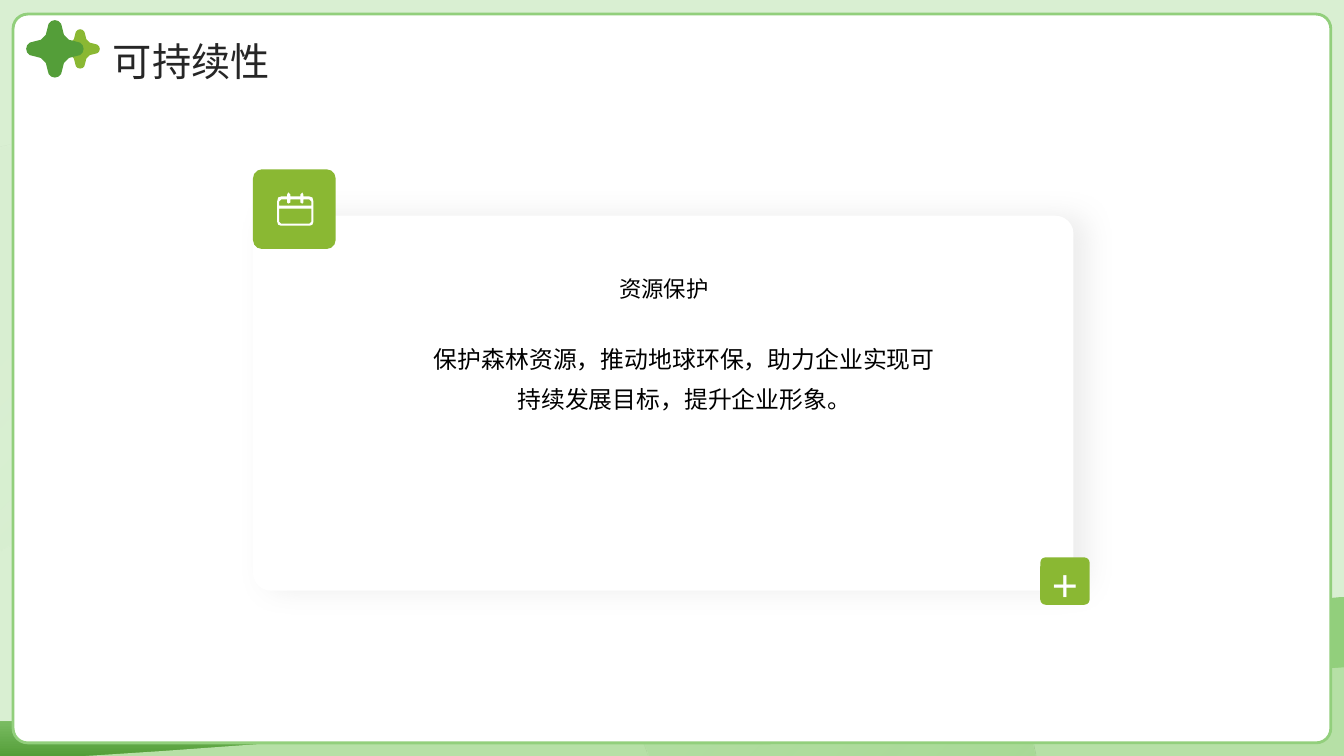
from dataclasses import dataclass

from lxml import etree
from pptx import Presentation
from pptx.dml.color import RGBColor
from pptx.enum.shapes import MSO_SHAPE
from pptx.enum.text import MSO_ANCHOR, MSO_AUTO_SIZE, PP_ALIGN
from pptx.oxml.ns import qn
from pptx.util import Inches, Pt

RECT, ROUND = MSO_SHAPE.RECTANGLE, MSO_SHAPE.ROUNDED_RECTANGLE
TOP, MIDDLE = MSO_ANCHOR.TOP, MSO_ANCHOR.MIDDLE
LEFT, CENTER = PP_ALIGN.LEFT, PP_ALIGN.CENTER
NO_FIT = MSO_AUTO_SIZE.NONE
WIDE, HIGH = 40 / 3, 7.5


@dataclass(frozen=True)
class Theme:
    font: str = "Arial"
    white: str = "FFFFFF"
    black: str = "000000"
    ink: str = "262626"
    pale: str = "D9EFD2"
    mist: str = "B6E0A6"
    leaf: str = "92CF7C"
    lime: str = "8AB833"
    forest: str = "549E39"
    shade: str = "A5A5A5"
    title: int = 28
    head: int = 16
    body: int = 17
    plus: int = 32


THEME = Theme()


def rgb(code):
    return RGBColor.from_string(code)


def add_box(slide, kind, box, fill, line=None, round_by=None):
    shape = slide.shapes.add_shape(kind, *map(Inches, box))
    shape.shadow.inherit = False
    if round_by is not None:
        shape.adjustments[0] = round_by
    shape.fill.solid()
    shape.fill.fore_color.rgb = rgb(fill)
    if line:
        shape.line.color.rgb = rgb(line)
        shape.line.width = Pt(2)
    else:
        shape.line.fill.background()
    return shape


def trace(start, steps, parts=6):
    """Turn line steps (x, y) and cubic steps (six numbers) into points."""
    points = [start]
    for step in steps:
        if len(step) == 2:
            points.append(step)
            continue
        knots = [points[-1], step[:2], step[2:4], step[4:]]
        for i in range(1, parts + 1):
            t = i / parts
            u = 1 - t
            mix = (u ** 3, 3 * u * u * t, 3 * u * t * t, t ** 3)
            points.append(tuple(sum(m * k[a] for m, k in zip(mix, knots))
                                for a in (0, 1)))
    return points


def add_form(slide, loops, fill=None):
    """Join closed outlines into one shape; inner ones become holes."""
    form = None
    for loop in loops:
        start, *rest = [tuple(map(Inches, point)) for point in loop]
        if form is None:
            form = slide.shapes.build_freeform(*start)
        else:
            form.move_to(*start)
        form.add_line_segments(rest, close=True)
    shape = form.convert_to_shape()
    shape.shadow.inherit = False
    shape.line.fill.background()
    if fill:
        shape.fill.solid()
        shape.fill.fore_color.rgb = rgb(fill)
    return shape


def set_blend(shape, angle, stops):
    """Apply a two-stop gradient; each stop is (position, colour, opacity)."""
    shape.fill.gradient()
    shape.fill.gradient_angle = angle
    for stop, (place, color, alpha) in zip(shape.fill.gradient_stops, stops):
        stop.position = place
        stop.color.rgb = rgb(color)
        tint = stop._gs.find(qn("a:srgbClr"))
        etree.SubElement(tint, qn("a:alpha"), val=str(alpha * 1000))


def set_shade(shape):
    """Cast a soft grey shadow to the right."""
    glow = shape._element.spPr.find(qn("a:effectLst"))
    cast = etree.SubElement(glow, qn("a:outerShdw"), blurRad=str(Pt(20)),
                            dist=str(Pt(10)), dir="0", algn="l", rotWithShape="0")
    tint = etree.SubElement(cast, qn("a:srgbClr"), val=THEME.shade)
    etree.SubElement(tint, qn("a:alpha"), val="20000")


def write(shape, text, size, color, space, align=CENTER, anchor=TOP, inset=(0, 0)):
    frame = shape.text_frame
    frame.text = text
    side, edge = map(Inches, inset)
    para = frame.paragraphs[0]
    formats = (
        (frame, {"word_wrap": True, "auto_size": NO_FIT, "vertical_anchor": anchor,
                 "margin_left": side, "margin_right": side,
                 "margin_top": edge, "margin_bottom": edge}),
        (para, {"alignment": align, "line_spacing": space}),
        (para.runs[0].font, {"name": THEME.font, "size": Pt(size)}),
    )
    for target, values in formats:
        for name, value in values.items():
            setattr(target, name, value)
    para.runs[0].font.color.rgb = rgb(color)


def add_text(slide, box, *args, **options):
    write(slide.shapes.add_textbox(*map(Inches, box)), *args, **options)


def draw_back(slide, box):
    x, y, w, h = box
    right, base = x + w, y + h
    add_box(slide, RECT, box, THEME.pale)
    hill = trace((right, y + 5.92), [
        (right, base), (x, base), (x, y + 7.16), (x + 0.13, y + 7.16),
        (x + 4.08, y + 7.09, x + 9.13, y + 6.34, x + 12.7, y + 5.98)])
    set_blend(add_form(slide, [hill]), 270,
              [(0.65, THEME.leaf, 100), (1, THEME.forest, 100)])
    slope = trace((right, y + 6.62), [
        (right, base), (x + 0.85, base), (x + 1.62, y + 7.45),
        (x + 5.62, y + 7.16, x + 9.43, y + 6.89, x + 12.83, y + 6.66)], 3)
    add_form(slide, [slope], THEME.mist)
    arc = trace((x + 2.35, y + 1.12), [
        (x + 1.65, y + 1.12, x + 0.97, y + 1.21, x + 0.33, y + 1.38),
        (x, y + 1.47), (x, y + 5.47), (x + 0.05, y + 5.44),
        (x + 0.72, y + 5.03, x + 1.51, y + 4.8, x + 2.35, y + 4.8),
        (x + 4.12, y + 4.8, x + 5.64, y + 5.82, x + 6.36, y + 7.31),
        (x + 6.44, base), (x + 10.28, base), (x + 10.21, y + 7.21),
        (x + 9.31, y + 3.71, x + 6.13, y + 1.12, x + 2.35, y + 1.12)], 4)
    set_blend(add_form(slide, [arc]), 135,
              [(0, THEME.leaf, 37), (0.85, THEME.pale, 10)])
    add_box(slide, ROUND, (x + 0.13, y + 0.14, w - 0.26, h - 0.27),
            THEME.white, THEME.leaf, round_by=0.02)


def draw_icon(slide, box):
    """Draw a calendar: its outline, then the page and header holes."""
    x, y, w, h = box
    mid = x + w / 2

    def mirror(half):
        """Complete a right half, listed from top to bottom."""
        return ([(mid + a, y + b) for a, b in half]
                + [(mid - a, y + b) for a, b in reversed(half)])

    rim = w / 2
    add_form(slide, [
        mirror([(0.05, 0.04), (0.05, 0.02), (0.07, 0), (0.08, 0.02), (0.08, 0.04),
                (rim - 0.04, 0.04), (rim - 0.01, 0.05), (rim, 0.09),
                (rim, h - 0.04), (rim - 0.01, h - 0.01), (rim - 0.04, h)]),
        mirror([(rim - 0.02, 0.16), (rim - 0.02, h - 0.04), (rim - 0.04, h - 0.02)]),
        mirror([(0.05, 0.07), (0.05, 0.1), (0.07, 0.11), (0.08, 0.1), (0.08, 0.07),
                (rim - 0.04, 0.07), (rim - 0.02, 0.09), (rim - 0.02, 0.13)]),
    ], THEME.white)


def draw_card(slide, box):
    x, y, w, h = box
    set_shade(add_box(slide, ROUND, box, THEME.white, round_by=0.048))
    add_box(slide, ROUND, (x, y - 0.46, 0.82, 0.79), THEME.lime, round_by=0.113)
    add_text(slide, (x + 1.78, y + 1.17, 5, 1.86),
             "保护森林资源，推动地球环保，助力企业实现可持续发展目标，提升企业形象。",
             THEME.body, THEME.black, 1.4)
    add_text(slide, (x + 0.32, y + 0.44, 7.51, 0.54), "资源保护",
             THEME.head, THEME.black, 1.1, anchor=MIDDLE)
    more = add_box(slide, ROUND, (x + w - 0.33, y + h - 0.33, 0.49, 0.47),
                   THEME.lime, round_by=0.113)
    write(more, "+", THEME.plus, THEME.white, 1.1, anchor=MIDDLE, inset=(0.1, 0.05))
    draw_icon(slide, (x + 0.24, y - 0.23, 0.36, 0.33))


def draw_star(slide, box, color):
    """Draw a soft four-armed star from one arm turned four times."""
    x, y, w, h = box
    arm = ((0.46, -0.25, 0.25, -0.46, 0.25, -0.75),
           (0.25, -0.89, 0.14, -1, 0, -1),
           (-0.14, -1, -0.25, -0.89, -0.25, -0.75))
    steps = []
    for _ in range(4):
        steps += arm
        arm = [tuple(n for a, b in zip(s[::2], s[1::2]) for n in (b, -a)) for s in arm]
    add_form(slide, [[(x + w / 2 * (1 + a), y + h / 2 * (1 + b))
                      for a, b in trace((0.75, -0.25), steps, 3)]], color)


def draw_title(slide, box):
    x, y, w, h = box
    title = slide.shapes.title
    places = zip(("left", "top", "width", "height"), (x + 0.76, y - 0.02, w - 0.76, h))
    for name, value in places:
        setattr(title, name, Inches(value))
    write(title, "可持续性", THEME.title, THEME.ink, 1.3, LEFT, inset=(0.1, 0.05))
    slide.shapes._spTree.append(title._element)
    draw_star(slide, (x + 0.34, y + 0.09, 0.39, 0.39), THEME.lime)
    draw_star(slide, (x, y, 0.57, 0.57), THEME.forest)


def main():
    deck = Presentation()
    deck.slide_width, deck.slide_height = Inches(WIDE), Inches(HIGH)
    slide = deck.slides.add_slide(deck.slide_layouts[5])
    draw_back(slide, (0, 0, WIDE, HIGH))
    draw_card(slide, (2.51, 2.14, 8.14, 3.72))
    draw_title(slide, (0.26, 0.2, 12.14, 0.57))
    deck.save("out.pptx")


if __name__ == "__main__":
    main()
